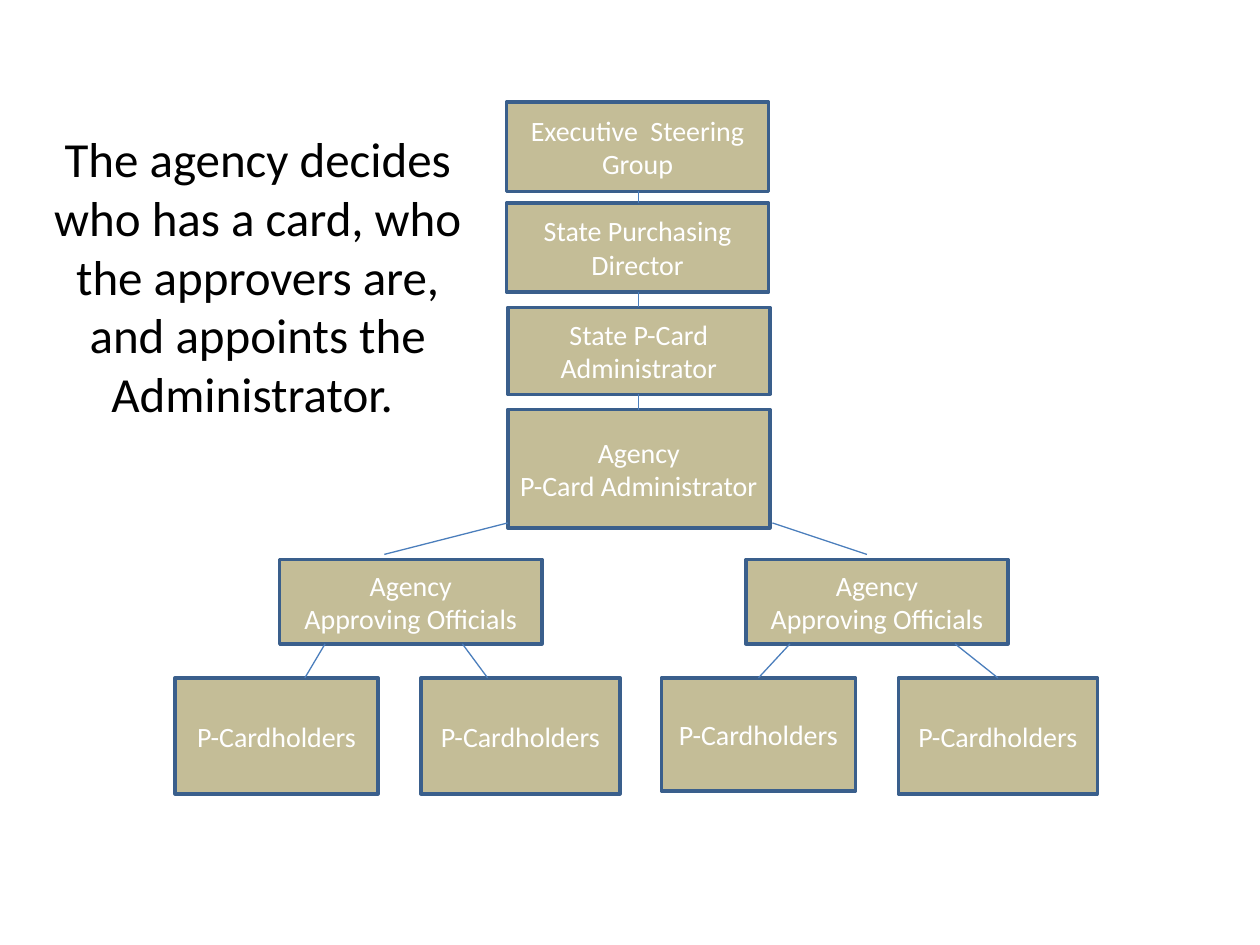
from lxml import etree
from pptx import Presentation
from pptx import util as u
from pptx.dml.color import RGBColor
from pptx.enum import shapes, text
from pptx.oxml import ns

TAN = RGBColor(0xC4, 0xBD, 0x97)
BORDER_BLUE = RGBColor(0x3A, 0x5F, 0x8C)
LINK_BLUE = RGBColor(0x4B, 0x7E, 0xBC)
WHITE = RGBColor(0xFF, 0xFF, 0xFF)
BLACK = RGBColor(0, 0, 0)

BOX_WIDTH = 2.08


def write_text(frame, lines, size=16, color=WHITE, anchor=text.MSO_ANCHOR.MIDDLE):
    frame.word_wrap = True
    frame.vertical_anchor = anchor
    for index, line in enumerate(lines):
        paragraph = frame.paragraphs[0] if index == 0 else frame.add_paragraph()
        paragraph.alignment = text.PP_ALIGN.CENTER
        run = paragraph.add_run()
        run.text = line
        run.font.name = "Calibri"
        run.font.size = u.Pt(size)
        run.font.color.rgb = color


def add_box(slide, lines, left, top, width, height):
    shape = slide.shapes.add_shape(
        shapes.MSO_SHAPE.RECTANGLE, *map(u.Inches, (left, top, width, height)))
    shape.shadow.inherit = False
    shape.fill.solid()
    shape.fill.fore_color.rgb = TAN
    shape.line.color.rgb = BORDER_BLUE
    shape.line.width = u.Pt(2)
    write_text(shape.text_frame, lines)


def add_link(slide, *ends):
    connector = slide.shapes.add_connector(
        shapes.MSO_CONNECTOR.STRAIGHT, *map(u.Inches, ends))
    connector.line.color.rgb = LINK_BLUE
    connector.line.width = u.Pt(0.75)
    etree.SubElement(connector._element.spPr, ns.qn("a:effectLst"))


def add_statement(slide, left, top, width, height):
    box = slide.shapes.add_textbox(*map(u.Inches, (left, top, width, height)))
    lines = ["The agency decides who has a card, who the approvers are,",
             "and appoints the", "Administrator. "]
    write_text(box.text_frame, lines, size=28, color=BLACK,
               anchor=text.MSO_ANCHOR.TOP)


def add_chain(slide, left, top, width):
    levels = [
        (["Executive  Steering Group"], 0, 0, 0.71),
        (["State Purchasing Director"], 0, 0.8, 0.71),
        (["State P-Card Administrator"], 0.01, 1.63, 0.69),
        (["Agency", "P-Card Administrator"], 0.01, 2.44, 0.94),
    ]
    center = left + 1.05
    previous_bottom = None
    for lines, shift, offset, height in levels:
        add_box(slide, lines, left + shift, top + offset, width, height)
        if previous_bottom is not None:
            add_link(slide, center, top + offset, center, previous_bottom)
        previous_bottom = top + offset + height


def add_branch(slide, left, top, width, height, holders, links):
    add_box(slide, ["Agency", "Approving Officials"], left, top, width, height)
    holder_top = top + 0.94
    for holder_left, holder_width, holder_height in holders:
        add_box(slide, ["P-Cardholders"], holder_left, holder_top,
                holder_width, holder_height)
    for start, end in links:
        add_link(slide, start, top + height, end, holder_top)


def main():
    presentation = Presentation()
    presentation.slide_width = u.Inches(10)
    presentation.slide_height = u.Inches(7.5)
    slide = presentation.slides.add_slide(presentation.slide_layouts[6])

    add_statement(slide, 0.17, 0.97, 3.75, 2.46)
    add_chain(slide, 4.02, 0.81, BOX_WIDTH)
    add_branch(slide, 2.22, 4.44, BOX_WIDTH, 0.67,
               holders=[(1.39, 1.61, 0.92), (3.34, 1.58, 0.92)],
               links=[(2.58, 2.42), (3.67, 3.87)])
    add_branch(slide, 5.92, 4.44, BOX_WIDTH, 0.67,
               holders=[(5.25, 1.54, 0.9), (7.13, 1.58, 0.92)],
               links=[(6.27, 6.02), (7.58, 7.92)])
    for start, end in [(6.13, 6.88), (4.03, 3.05)]:
        add_link(slide, start, 4.15, end, 4.4)

    presentation.save("out.pptx")


if __name__ == "__main__":
    main()
